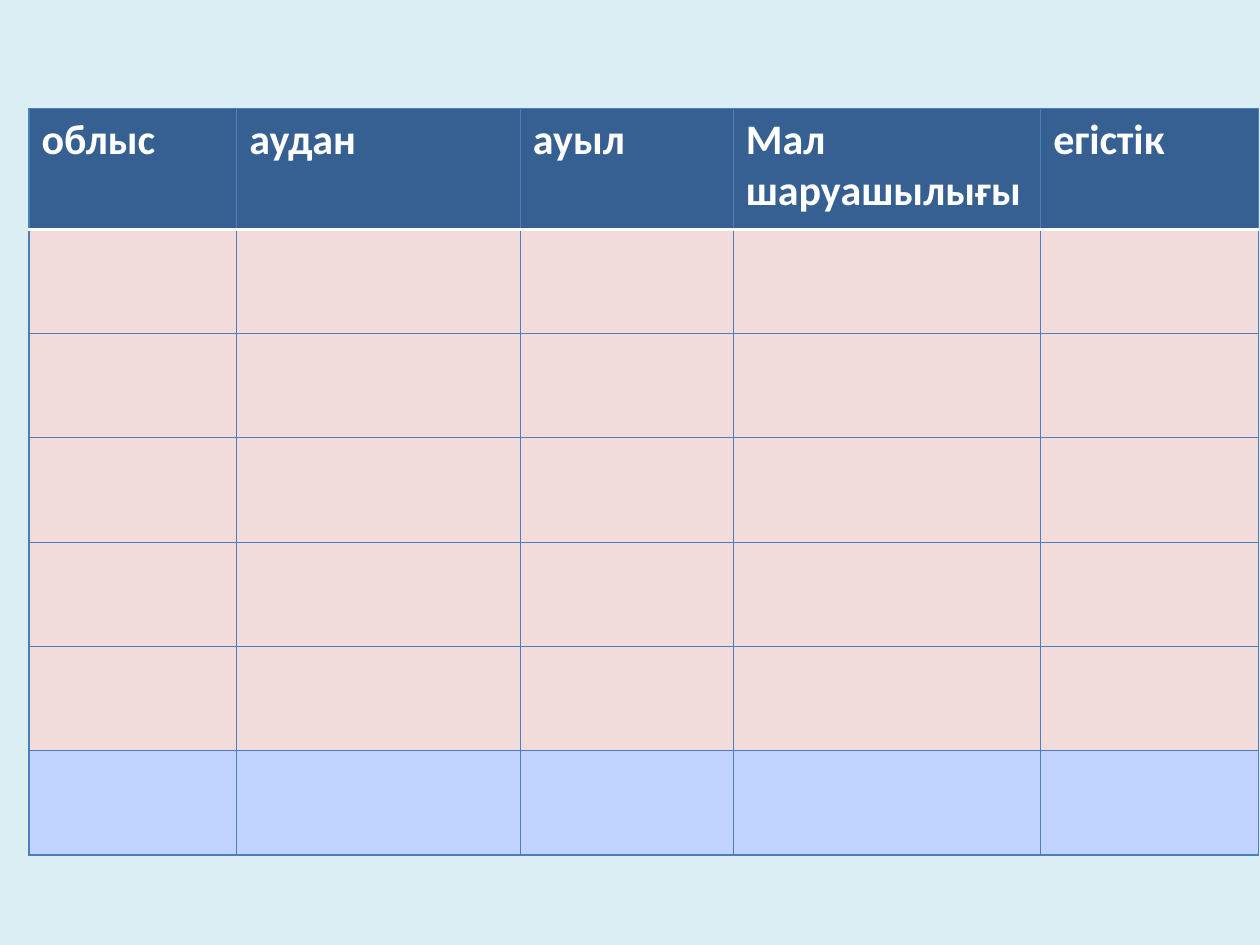
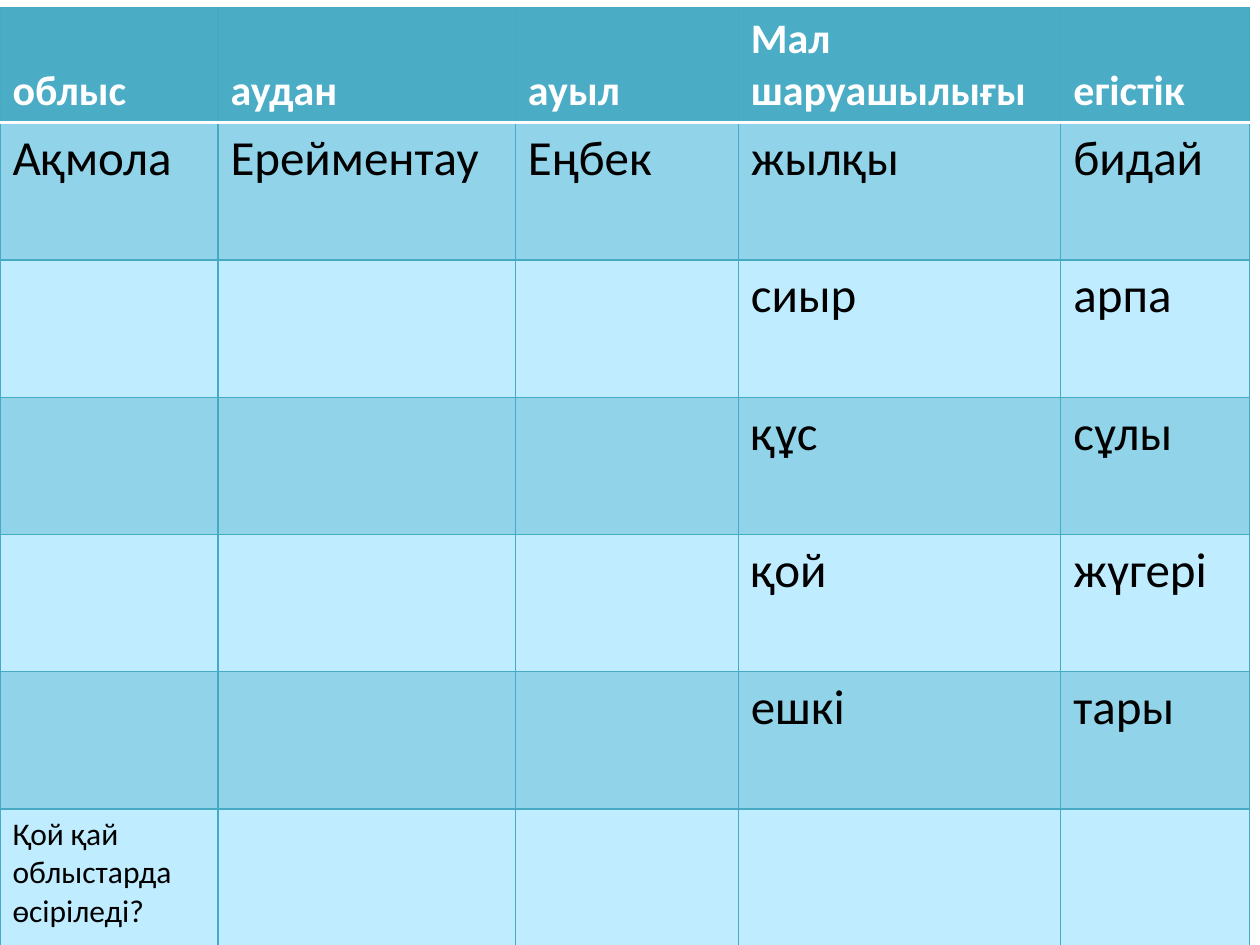
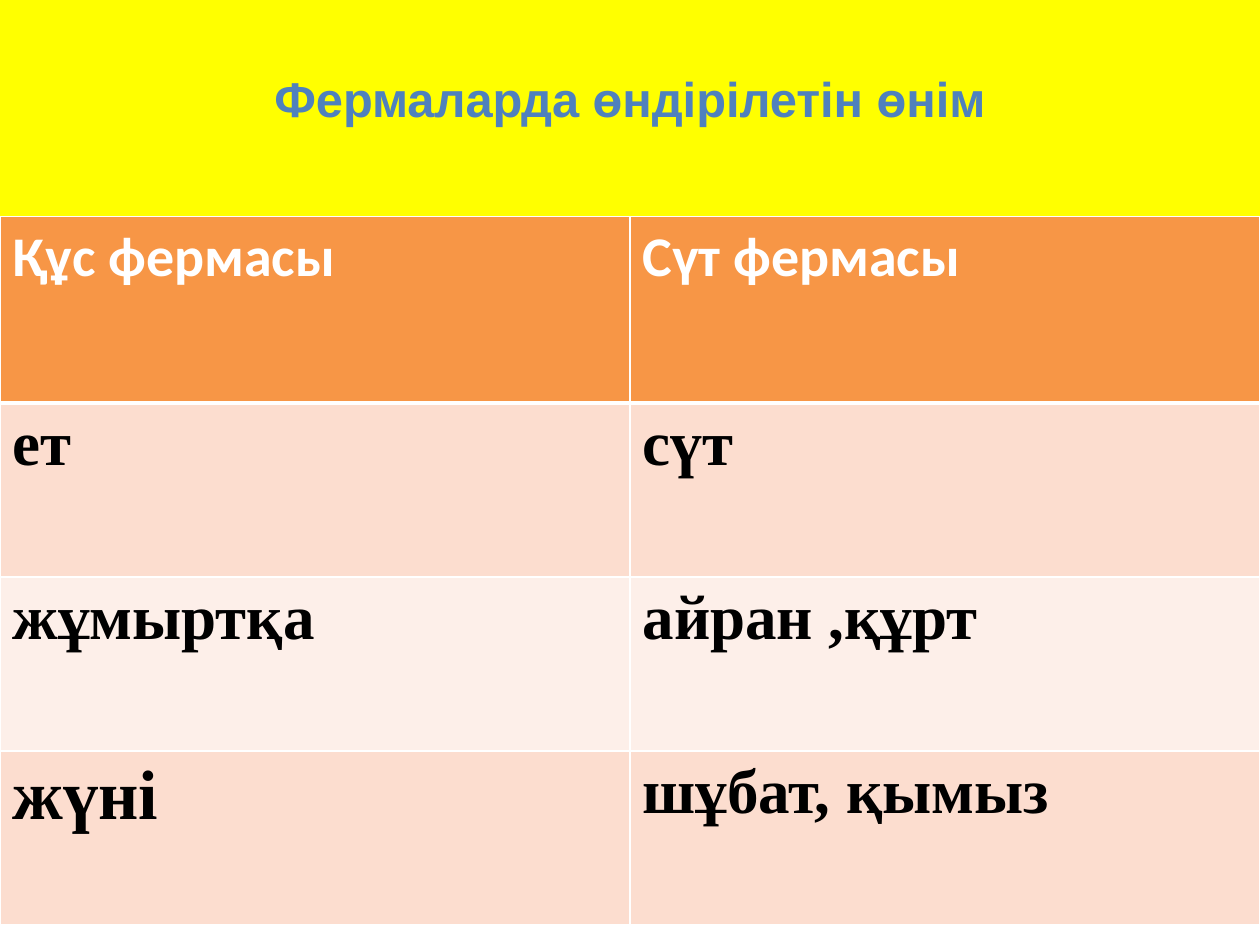
from lxml import etree
from pptx import Presentation
from pptx import util as u
from pptx.dml.color import RGBColor
from pptx.enum import shapes, text
from pptx.oxml.ns import qn

HEADS = ["облыс", "аудан", "ауыл", "Мал шаруашылығы", "егістік"]
HEAD = dict(name="Calibri", size=24, bold=True, color="FFFFFF")
BODY = dict(name="Calibri", size=28, bold=False, color="000000")
FARM = dict(name="Times New Roman", size=36, bold=True, color="000000")
TITLE = dict(name="Arial", size=27.9, bold=True, color="4F81BD")


def paint(part, code):
    if hasattr(part, "solid"):
        part.solid()
        part = part.fore_color
    part.rgb = RGBColor.from_string(code)


class Deck:
    def __init__(self):
        self.prs = Presentation()
        self.prs.slide_width = u.Inches(10)
        self.prs.slide_height = u.Inches(7.5)
        self.slide = None

    def page(self, layout):
        self.slide = self.prs.slides.add_slide(self.prs.slide_layouts[layout])

    def wide(self, pct):
        return round(self.prs.slide_width * pct / 100)

    def high(self, pct):
        return round(self.prs.slide_height * pct / 100)

    def box(self, x, y, w, h):
        return self.wide(x), self.high(y), self.wide(w), self.high(h)

    def style(self, font, form):
        for key, val in form.items():
            if key == "color":
                paint(font.color, val)
            else:
                setattr(font, key, u.Pt(val) if key == "size" else val)

    def panel(self, area, fill):
        rect = self.slide.shapes.add_shape(
            shapes.MSO_SHAPE.RECTANGLE, *self.box(*area))
        rect.shadow.inherit = False
        rect.line.fill.background()
        paint(rect.fill, fill)

    def title(self, words, area, fill, form):
        head = self.slide.shapes.title
        places = zip(("left", "top", "width", "height"), self.box(*area))
        for key, val in places:
            setattr(head, key, val)
        paint(head.fill, fill)
        frame = head.text_frame
        frame.text = words
        opts = dict(word_wrap=True, margin_bottom=self.high(2.8),
                    vertical_anchor=text.MSO_ANCHOR.MIDDLE)
        for key, val in opts.items():
            setattr(frame, key, val)
        line = frame.paragraphs[0]
        line.alignment = text.PP_ALIGN.CENTER
        self.style(line.runs[0].font, form)

    def edge(self, cell, sides):
        props = cell._tc.get_or_add_tcPr()
        for spot, (side, (color, size)) in enumerate(sides.items()):
            line = etree.Element(qn("a:ln" + side), w=str(u.Pt(size)))
            fill = etree.SubElement(line, qn("a:solidFill"))
            etree.SubElement(fill, qn("a:srgbClr"), val=color)
            props.insert(spot, line)

    def table(self, left, top, cols, rows, data, fills, forms, rim, rule,
              base=text.MSO_ANCHOR.TOP, sizes={}):
        area = self.box(left, top, sum(cols), sum(rows))
        grid = self.slide.shapes.add_table(len(rows), len(cols), *area).table
        grid.first_row = grid.horz_banding = False
        for col, pct in zip(grid.columns, cols):
            col.width = self.wide(pct)
        for row, pct in zip(grid.rows, rows):
            row.height = self.high(pct)
        for r, (words, fill) in enumerate(zip(data, fills)):
            for c, word in enumerate(words):
                cell = grid.cell(r, c)
                paint(cell.fill, fill)
                self.edge(cell, dict(L=rim, R=rim, T=rule if r == 1 else rim,
                                     B=rule if r == 0 else rim))
                if r == 0:
                    cell.vertical_anchor = base
                if word:
                    cell.text = word
                    form = dict(forms[min(r, 1)])
                    form["size"] = sizes.get((r, c), form["size"])
                    run = cell.text_frame.paragraphs[0].runs[0]
                    self.style(run.font, form)


def main():
    deck = Deck()
    none = [""] * 5

    deck.page(6)
    deck.panel((0, 0, 100, 100), "DBEEF4")
    deck.table(2.3, 11.45, [16.5, 22.5, 16.9, 24.4, 17.3],
               [12.8] + [11.04] * 6, [HEADS] + [none] * 6,
               ["376092"] + ["F2DCDB"] * 5 + ["C0D4FF"],
               (HEAD, BODY), ("4B7EBC", 0.75), ("FFFFFF", 2))

    deck.page(6)
    stock = ["жылқы", "сиыр", "құс", "қой", "ешкі"]
    crops = ["бидай", "арпа", "сұлы", "жүгері", "тары"]
    data = [["", "", "", *pair] for pair in zip(stock, crops)]
    data[0][:3] = ["Ақмола", "Ерейментау", "Еңбек"]
    quiz = ["Қой қай облыстарда өсіріледі?"] + none[1:]
    deck.table(0, 0.8, [17.3, 23.6, 17.7, 25.6, 15],
               [11.73] + [14.53] * 6, [HEADS, *data, quiz],
               ["4BACC6"] + ["91D3E8", "BFEDFF"] * 3,
               (HEAD, BODY), ("46AAC5", 0.75), ("FFFFFF", 2),
               text.MSO_ANCHOR.BOTTOM, {(6, 0): 18})

    deck.page(5)
    deck.title("Фермаларда өндірілетін өнім", (0, 0, 100, 22.93),
               "FFFF00", TITLE)
    farms = [["Құс фермасы", "Сүт фермасы"], ["ет", "сүт"],
             ["жұмыртқа", "айран ,құрт"], ["жүні", "шұбат, қымыз"]]
    deck.table(0, 22.93, [50, 50], [19.73] + [18.4] * 3, farms,
               ["F79646", "FCDDCF", "FDEFE9", "FCDDCF"],
               (dict(HEAD, size=32), FARM), ("FFFFFF", 1), ("FFFFFF", 3),
               sizes={(3, 0): 40})

    deck.prs.save("out.pptx")


if __name__ == "__main__":
    main()
